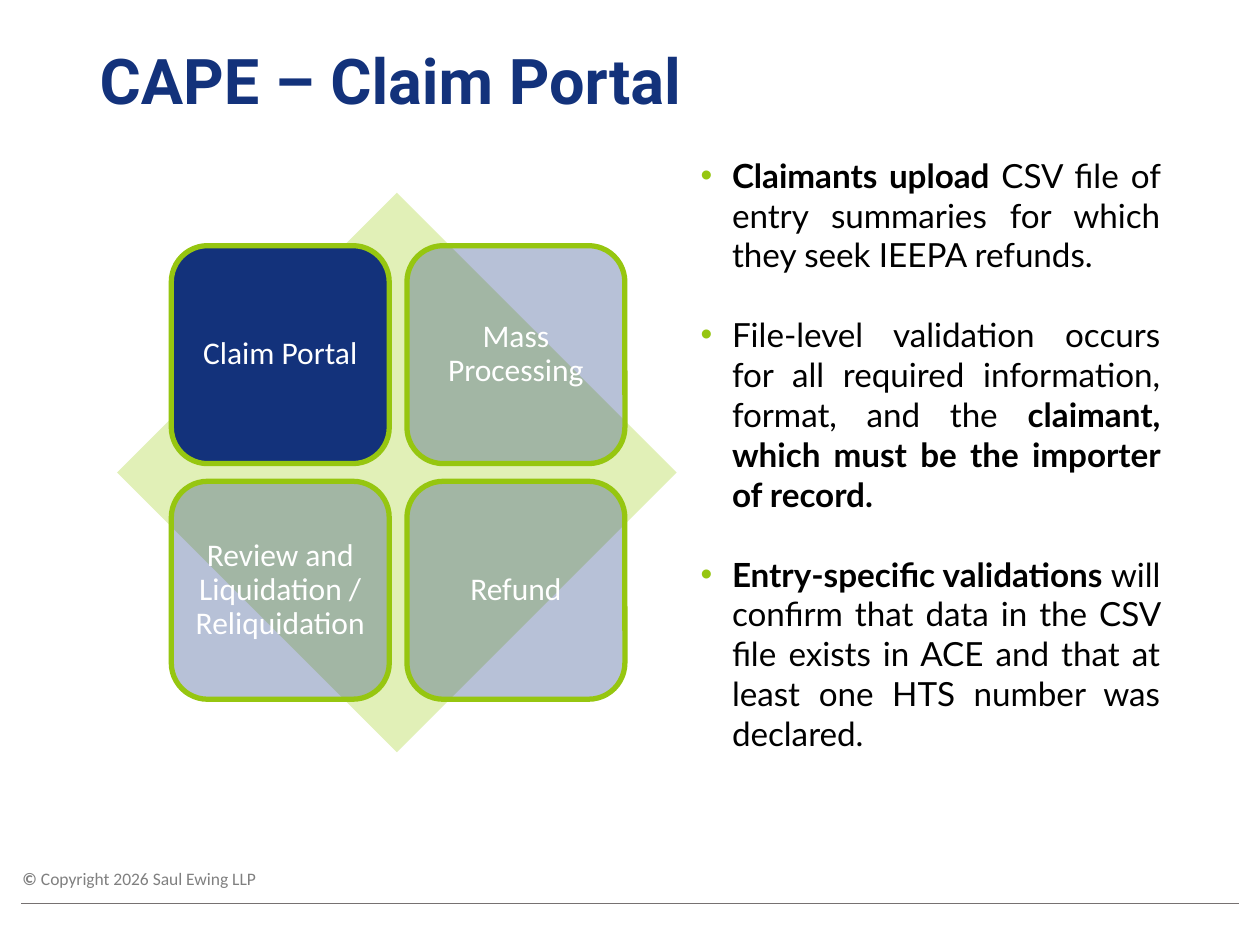
from lxml.etree import SubElement as Sub
from pptx import Presentation
from pptx.dml.color import RGBColor
from pptx.enum.shapes import MSO_CONNECTOR as Conn, MSO_SHAPE as Shape
from pptx.enum.text import MSO_ANCHOR as Anchor, MSO_AUTO_SIZE as Fit, PP_ALIGN as Align
from pptx.oxml.ns import qn
from pptx.util import Emu, Pt

PX = 9144  # 100 px to the inch
NAVY, GREEN, PALE, WHITE = "13327B", "96C610", "E1F0B7", "FFFFFF"

TITLE = "CAPE – Claim Portal"
STEPS = [  # text, opacity in percent
    ("Claim Portal", 100),
    ("Mass Processing", 30),
    ("Review and Liquidation / Reliquidation", 30),
    ("Refund", 30),
]
POINTS = [  # runs of (text, bold)
    [("Claimants upload ", True),
     ("CSV file of entry summaries for which they seek IEEPA refunds.", False)],
    [("File-level validation occurs for all required information, format, and the ", False),
     ("claimant, which must be the importer of record.", True)],
    [("Entry-specific validations ", True),
     ("will confirm that data in the CSV file exists in ACE and that at least "
      "one HTS number was declared.", False)],
]
RIGHTS = [("© ", True), ("Copyright 2026 Saul Ewing LLP", False)]

LEFT, TOP, SIDE, GAP = 136, 195, 173, 14


def px(*nums):
    return [Emu(n * PX) for n in nums]


def rgb(code):
    return RGBColor.from_string(code)


def style(para, name, size, color):
    font = para.font
    font.name, font.size = name, Pt(size)
    font.color.rgb = rgb(color)


def add_runs(para, runs):
    for text, bold in runs:
        run = para.add_run()
        run.text, run.font.bold = text, bold


def place(shape, *box):
    shape.left, shape.top, shape.width, shape.height = px(*box)


def add_bullet(para):
    props = para._p.get_or_add_pPr()
    props.set("marL", str(25 * PX))
    props.set("indent", str(-25 * PX))
    Sub(Sub(props, qn("a:buClr")), qn("a:srgbClr"), val=GREEN)
    Sub(props, qn("a:buFont"), typeface="Arial")
    Sub(props, qn("a:buChar"), char="•")


def add_tile(shapes, spot, text, alpha):
    row, col = divmod(spot, 2)
    step = SIDE + GAP
    tile = shapes.add_shape(Shape.ROUNDED_RECTANGLE,
                            *px(LEFT + col * step, TOP + row * step, SIDE, SIDE))
    tile.shadow.inherit = False
    tile.fill.solid()
    tile.fill.fore_color.rgb = rgb(NAVY)
    if alpha < 100:
        color = tile.fill._xPr.find(".//" + qn("a:srgbClr"))
        Sub(color, qn("a:alpha"), val=str(alpha * 1000))
    tile.line.color.rgb = rgb(GREEN)
    tile.line.width = Pt(3)
    frame = tile.text_frame
    frame.word_wrap = True
    frame.vertical_anchor = Anchor.MIDDLE
    # the rounded corners add to the text inset
    frame.margin_left = frame.margin_right = frame.margin_top = frame.margin_bottom = Emu(8 * PX)
    para = frame.paragraphs[0]
    para.text = text
    para.alignment, para.line_spacing = Align.CENTER, 0.9
    style(para, "Calibri", 18, WHITE)


def main():
    deck = Presentation()
    deck.slide_width, deck.slide_height = px(1000, 750)
    slide = deck.slides.add_slide(deck.slide_layouts[1])
    shapes = slide.shapes

    title, body = slide.placeholders
    place(title, 69, 25, 862, 84)
    title.text_frame.auto_size = Fit.NONE
    title.text_frame.vertical_anchor = Anchor.MIDDLE
    para = title.text_frame.paragraphs[0]
    para.text = TITLE
    para.alignment, para.line_spacing = Align.LEFT, 0.9
    style(para, "Roboto", 36, NAVY)
    para.font.bold = True

    place(body, 546, 118, 385, 479)
    frame = body.text_frame
    frame.auto_size = Fit.NONE
    for i, runs in enumerate(POINTS):
        para = frame.add_paragraph() if i else frame.paragraphs[0]
        add_bullet(para)
        para.alignment = Align.JUSTIFY
        para.space_before = Pt(22.8 if i else 0)
        add_runs(para, runs)
        style(para, "Lato", 19, "000000")

    diamond = shapes.add_shape(Shape.DIAMOND, *px(93, 153, 444, 444))
    diamond.shadow.inherit = False
    diamond.fill.solid()
    diamond.fill.fore_color.rgb = rgb(PALE)
    diamond.line.fill.background()
    for spot, (text, alpha) in enumerate(STEPS):
        add_tile(shapes, spot, text, alpha)

    rights = shapes.add_textbox(*px(8, 684, 208, 27))
    rights.text_frame.word_wrap = False
    para = rights.text_frame.paragraphs[0]
    add_runs(para, RIGHTS)
    style(para, "Calibri", 10, "808080")

    rule = shapes.add_connector(Conn.STRAIGHT, *px(17, 717, 983, 717))
    rule.line.color.rgb = rgb("767171")
    rule.line.width = Pt(0.5)
    Sub(rule._element.spPr, qn("a:effectLst"))

    deck.save("out.pptx")


if __name__ == "__main__":
    main()
